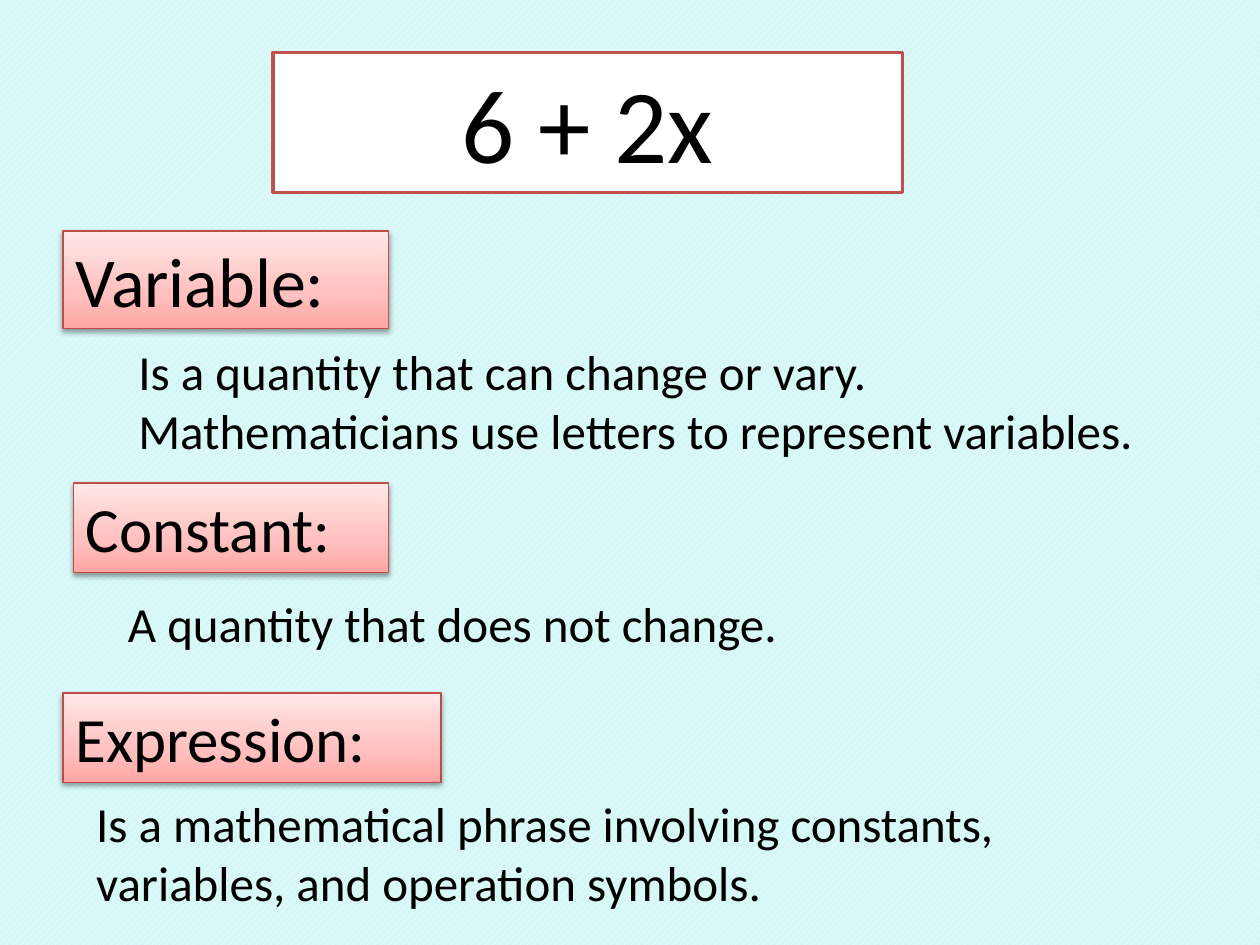
import copy
import lxml.etree
import pptx
import pptx.util
import pptx.dml.color
import pptx.enum.dml
import pptx.enum.shapes
import pptx.enum.text
import pptx.oxml.ns

Cm = pptx.util.Cm
Pt = pptx.util.Pt
RGBColor = pptx.dml.color.RGBColor
qn = pptx.oxml.ns.qn
ALIGN = pptx.enum.text.PP_ALIGN

BLACK = RGBColor(0x00, 0x00, 0x00)
WHITE = RGBColor(0xFF, 0xFF, 0xFF)
AQUA = RGBColor(0xD5, 0xF7, 0xF7)
RED = RGBColor(0xC0, 0x50, 0x4D)
EDGE = RGBColor(0xBF, 0x4C, 0x48)
ROSE = RGBColor(0xFF, 0xA6, 0xA5)
PINK = RGBColor(0xFF, 0xC0, 0xBF)
PALE = RGBColor(0xFF, 0xE7, 0xE7)


def put(text, left, top, width, height, size=28, box=False, align=ALIGN.LEFT):
    area = Cm(left), Cm(top), Cm(width), Cm(height)
    if box:
        shape = slide.shapes.add_shape(pptx.enum.shapes.MSO_SHAPE.RECTANGLE, *area)
        shape.shadow.inherit = False
    else:
        shape = slide.shapes.add_textbox(*area)
    frame = shape.text_frame
    frame.word_wrap = True
    frame.auto_size = pptx.enum.text.MSO_AUTO_SIZE.SHAPE_TO_FIT_TEXT
    frame.vertical_anchor = pptx.enum.text.MSO_ANCHOR.TOP
    para = frame.paragraphs[0]
    para.alignment = align
    run = para.add_run()
    run.text = text
    run.font.name = "Calibri"
    run.font.size = Pt(size)
    run.font.color.rgb = BLACK
    return shape


def shade(shape):
    shape.line.color.rgb = EDGE
    shape.line.width = Pt(0.75)
    fill = shape.fill
    fill.gradient()
    fill.gradient_angle = 90
    props = shape._element.spPr
    stops = props.find(qn("a:gradFill")).find(qn("a:gsLst"))
    stops.insert(1, copy.deepcopy(stops[0]))
    for stop, color, place in zip(fill.gradient_stops, (ROSE, PINK, PALE), (0, 0.35, 1)):
        stop.color.rgb = color
        stop.position = place
    glow = lxml.etree.SubElement(
        props.find(qn("a:effectLst")), qn("a:outerShdw"),
        blurRad=str(Pt(3.1)), dist=str(Pt(1.6)), dir="5400000", rotWithShape="0")
    tone = lxml.etree.SubElement(glow, qn("a:srgbClr"), val=str(BLACK))
    lxml.etree.SubElement(tone, qn("a:alpha"), val="38000")


deck = pptx.Presentation()
deck.slide_width = Cm(25.4)
deck.slide_height = Cm(19.05)
slide = deck.slides.add_slide(deck.slide_layouts[6])
back = slide.background.fill
back.patterned()
back.pattern = pptx.enum.dml.MSO_PATTERN.WIDE_UPWARD_DIAGONAL
back.fore_color.rgb = WHITE
back.back_color.rgb = AQUA

title = put("6 + 2x", 5.5, 1.06, 12.7, 2.82, size=60, box=True, align=ALIGN.CENTER)
title.fill.solid()
title.fill.fore_color.rgb = WHITE
title.line.color.rgb = RED
title.line.width = Pt(2)

terms = [
    ("Variable:", 1.27, 4.66, 6.56, 1.96, 40),
    ("Constant:", 1.48, 9.74, 6.35, 1.8, 36),
    ("Expression:", 1.27, 13.97, 7.62, 1.8, 36),
]
for text, left, top, width, height, size in terms:
    shade(put(text, left, top, width, height, size=size, box=True))

notes = [
    ("Is a quantity that can change or vary.  Mathematicians use letters to represent variables.",
     2.54, 6.77, 2.64),
    ("A quantity that does not change.", 2.33, 11.85, 1.45),
    ("Is a mathematical phrase involving constants, variables, and operation symbols.",
     1.69, 15.88, 2.64),
]
for text, left, top, height in notes:
    put(text, left, top, 20.96, height)

deck.save("out.pptx")
